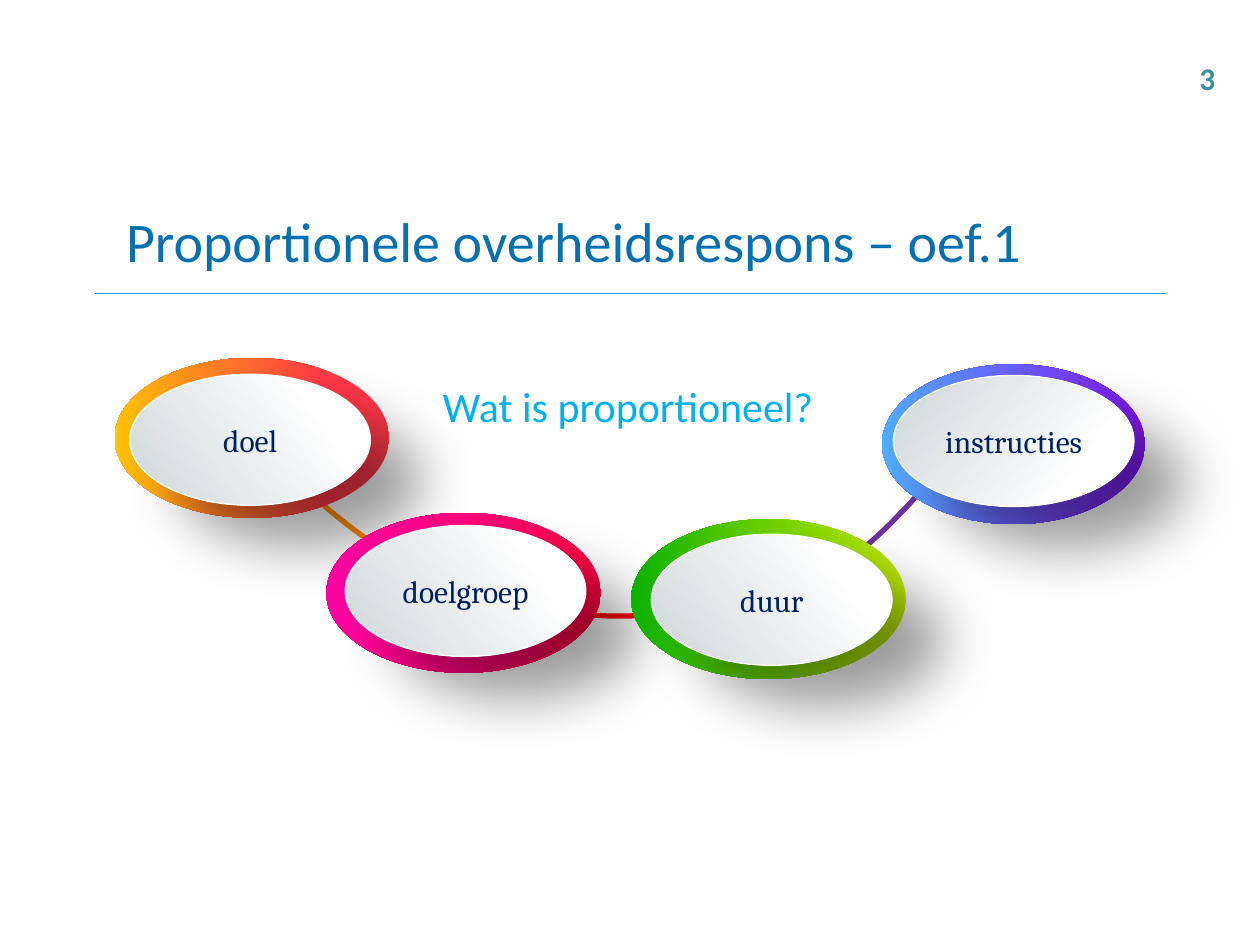
from lxml import etree
from pptx import Presentation, util as u
from pptx.dml.color import RGBColor
from pptx.enum import shapes, text
from pptx.oxml import ns

TITLE_BLUE = RGBColor(0x07, 0x70, 0xB1)
RULE_BLUE = RGBColor(0x0B, 0xA7, 0xDF)
QUESTION_BLUE = RGBColor(0x00, 0xB0, 0xF0)
NUMBER_TEAL = RGBColor(0x3E, 0x8E, 0xA9)
NAVY = RGBColor(0x00, 0x20, 0x60)
WHITE = RGBColor(0xFF, 0xFF, 0xFF)
PURPLE = RGBColor(0x70, 0x30, 0xA0)
RED = RGBColor(0xFF, 0x00, 0x00)
ORANGE = RGBColor(0xFF, 0x8A, 0x00)

GREY_TO_WHITE = [(0, "CDD5D8"), (37, "E6EAEB"), (77, "FFFFFF"), (100, "FFFFFF")]
WHITE_TO_GREY = [(0, "FFFFFF"), (23, "FFFFFF"), (63, "E6EAEB"), (100, "CDD5D8")]
VIOLET_RING = [(0, "8016EF"), (52, "6761F7"), (100, "4FACFE")]
ORANGE_RING = [(0, "FF3847"), (23, "FF3847"), (63, "FF7D25"), (100, "FFC203")]
PINK_RING = [(0, "FF0040"), (2, "FF0040"), (37, "FF0071"), (100, "FF00A2")]
GREEN_RING = [(0, "C3EA03"), (53, "67CE02"), (100, "0CB100")]


def bezier(p0, p1, p2, p3, steps=10):
    """Return points along a cubic curve, without its start."""
    ts = [i / steps for i in range(1, steps + 1)]
    return [tuple((1 - t) ** 3 * a + 3 * (1 - t) ** 2 * t * b
                  + 3 * (1 - t) * t ** 2 * c + t ** 3 * d
                  for a, b, c, d in zip(p0, p1, p2, p3)) for t in ts]


class Deck:
    """Draws styled elements on the current slide."""

    body_font = "Calibri"
    label_font = "Cambria"

    def __init__(self, prs):
        self.s = prs.slides.add_slide(prs.slide_layouts[5])

    def label(self, sp, words, size, color, font=None, align=text.PP_ALIGN.LEFT,
              bold=False):
        tf = sp.text_frame
        tf.text = words
        p = tf.paragraphs[0]
        p.alignment = align
        p.font.name = font or self.body_font
        p.font.size = u.Pt(size)
        p.font.bold = bold
        p.font.color.rgb = color
        return p

    def title(self, words, box):
        sp = self.s.shapes.title
        sp.left, sp.top, sp.width, sp.height = map(u.Inches, box)
        sp.text_frame.vertical_anchor = text.MSO_ANCHOR.MIDDLE
        self.label(sp, words, 32, TITLE_BLUE)

    def textbox(self, words, box, size, color, wrap=True, **style):
        sp = self.s.shapes.add_textbox(*map(u.Inches, box))
        sp.text_frame.word_wrap = wrap
        sp.text_frame.auto_size = text.MSO_AUTO_SIZE.SHAPE_TO_FIT_TEXT
        return self.label(sp, words, size, color, **style)

    def rule(self, x1, x2, y):
        sp = self.s.shapes.add_connector(
            shapes.MSO_CONNECTOR.STRAIGHT, *map(u.Inches, (x1, y, x2, y)))
        sp.line.color.rgb = RULE_BLUE
        sp.line.width = u.Pt(0.75)
        etree.SubElement(sp._element.spPr, ns.qn("a:effectLst"))

    def curve(self, color, start, *segments):
        points = [start]
        for segment in segments:
            points += bezier(points[-1], *segment)
        points = [(u.Inches(x), u.Inches(y)) for x, y in points]
        builder = self.s.shapes.build_freeform(*points[0])
        builder.add_line_segments(points[1:], close=False)
        sp = builder.convert_to_shape()
        sp.shadow.inherit = False
        sp.fill.background()
        sp.line.color.rgb = color
        sp.line.width = u.Pt(3)

    def ellipse(self, box, stops, angle, flip):
        sp = self.s.shapes.add_shape(shapes.MSO_SHAPE.OVAL, *map(u.Inches, box))
        sp.shadow.inherit = False
        sp.line.fill.background()
        sp.fill.gradient()
        sp.fill.gradient_angle = (360 - angle) % 360
        gs_list = sp._element.spPr.find(".//" + ns.qn("a:gsLst"))
        for gs in list(gs_list):
            gs_list.remove(gs)
        for pos, color in stops:
            gs = etree.SubElement(gs_list, ns.qn("a:gs"), pos=str(pos * 1000))
            etree.SubElement(gs, ns.qn("a:srgbClr"), val=color)
        if flip:
            sp._element.spPr.find(ns.qn("a:xfrm")).set("flipH", "1")
        return sp

    def cast_shadow(self, sp):
        effects = sp._element.spPr.find(ns.qn("a:effectLst"))
        shadow = etree.SubElement(
            effects, ns.qn("a:outerShdw"), blurRad=str(u.Pt(33)),
            dist=str(u.Pt(36.7)), dir=str(39 * 60000), algn="tl", rotWithShape="0")
        color = etree.SubElement(shadow, ns.qn("a:srgbClr"), val="000000")
        etree.SubElement(color, ns.qn("a:alpha"), val="38000")

    def bubble(self, words, ring_box, ring_stops, face_at, ring_angle=0, flip=True):
        self.ellipse(ring_box, ring_stops, ring_angle, flip)
        stops = WHITE_TO_GREY if flip else GREY_TO_WHITE
        sp = self.ellipse((*face_at, 1.91, 1.04), stops, 35, flip)
        sp.line.color.rgb = WHITE
        sp.line.width = u.Pt(0.75)
        self.cast_shadow(sp)
        tf = sp.text_frame
        tf.margin_left = tf.margin_right = tf.margin_top = tf.margin_bottom = 0
        tf.vertical_anchor = text.MSO_ANCHOR.MIDDLE
        self.label(sp, words, 18, NAVY, self.label_font, text.PP_ALIGN.CENTER)


def main():
    prs = Presentation()
    prs.slide_width, prs.slide_height = u.Inches(10), u.Inches(7.5)
    deck = Deck(prs)
    deck.rule(0.75, 9.25, 2.33)
    deck.title("Proportionele overheidsrespons – oef.1", (0.9, 1.53, 8.5, 0.75))
    p = deck.textbox("Wat is proportioneel?", (2.55, 2.91, 4.87, 0.54), 24,
                     QUESTION_BLUE, align=text.PP_ALIGN.CENTER)
    p.line_spacing = 1.15
    p.space_after = u.Pt(6)

    deck.curve(PURPLE, (7.26, 3.95), ((7.22, 4), (7.18, 4.04), (7.14, 4.08)),
               ((7.02, 4.21), (6.88, 4.33), (6.74, 4.45)))
    deck.curve(PURPLE, (6.69, 4.47), ((6.5, 4.6), (6.31, 4.7), (6.11, 4.77)))
    deck.bubble("instructies", (7, 2.89, 2.09, 1.27), VIOLET_RING, (7.09, 2.98),
                ring_angle=180, flip=False)
    deck.curve(RED, (4.49, 4.86), ((4.71, 4.89), (4.93, 4.9), (5.15, 4.88)),
               ((5.26, 4.87), (5.37, 4.86), (5.48, 4.85)))
    deck.curve(ORANGE, (2.47, 3.92), ((2.68, 4.12), (2.94, 4.31), (3.22, 4.48)))
    for words, ring_at, stops, face_at in [
        ("doel", (0.91, 2.84), ORANGE_RING, (1.03, 2.97)),
        ("doelgroep", (2.59, 4.07), PINK_RING, (2.74, 4.17)),
        ("duur", (5.01, 4.12), GREEN_RING, (5.17, 4.24)),
    ]:
        deck.bubble(words, (*ring_at, 2.18, 1.27), stops, face_at)
    deck.textbox("3", (9.42, 0.42, 0.33, 0.4), 18, NUMBER_TEAL, wrap=False, bold=True)
    prs.save("out.pptx")


if __name__ == "__main__":
    main()
